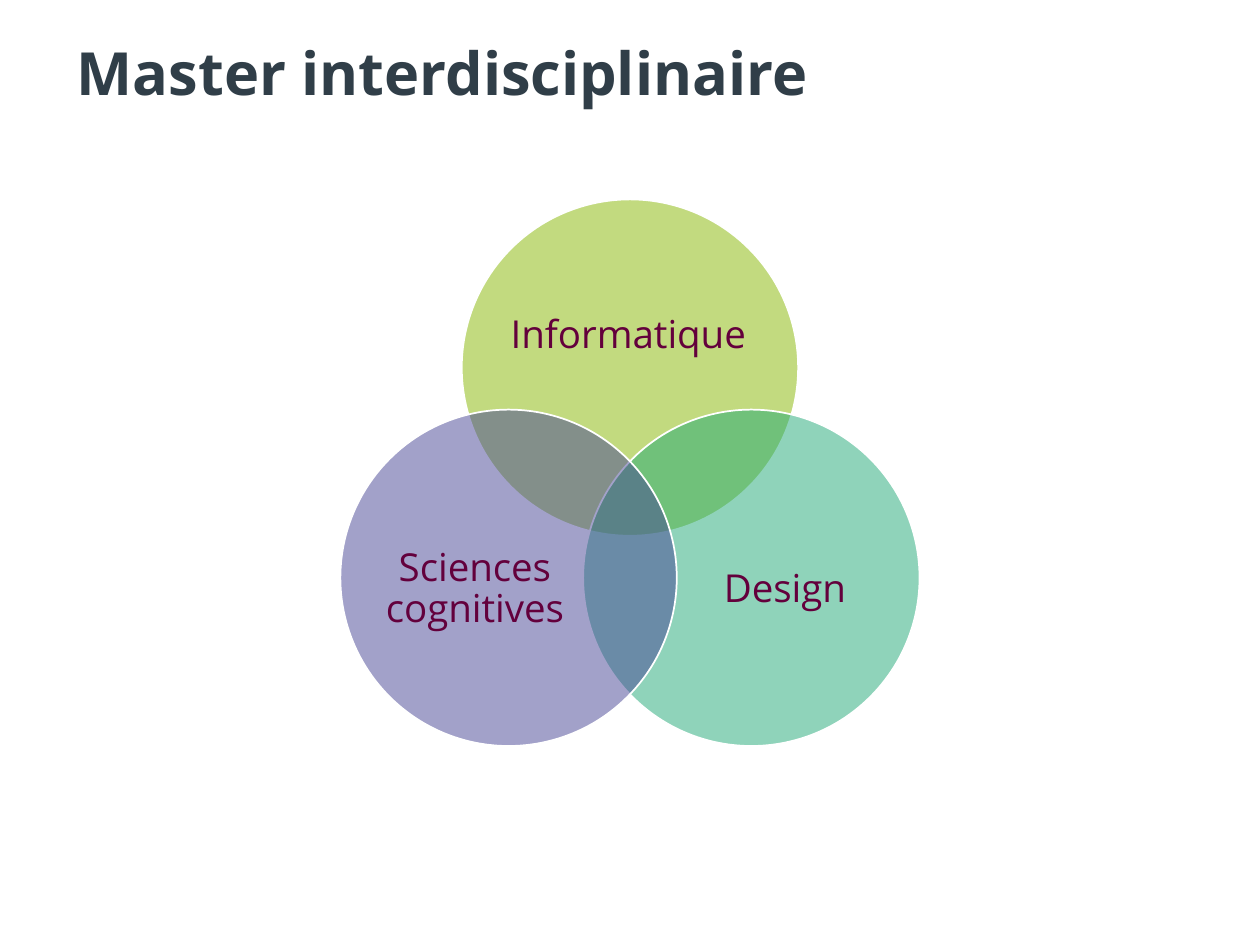
import math
import pptx
import pptx.util
import pptx.dml.color
import pptx.enum.shapes
import pptx.enum.text
import pptx.oxml.ns
import lxml.etree

TITLE = "Master interdisciplinaire"
FONT, INK, PLUM, WHITE = "Open Sans", "303E48", "63003C", "FFFFFF"

# label, fill, angle around the hub, label box as shares of the circle
DISCS = [
    ("Informatique", "86B700", -90, (0.13, 0.18, 0.73, 0.45)),
    ("Design", "20A977", 30, (0.3, 0.26, 0.6, 0.55)),
    ("Sciences cognitives", "464595", 150, (0.1, 0.26, 0.6, 0.55)),
]
WIDE, HIGH = 10, 7.5
HUB = (WIDE / 2, 4.03)
SIZE = 2.67
REACH = SIZE / 2.4

ALIGN = pptx.enum.text.PP_ALIGN
inch = pptx.util.Inches


def tint(code):
    return pptx.dml.color.RGBColor.from_string(code)


def write(shape, text, size, color, bold=False, align=ALIGN.LEFT, pad=(0, 0)):
    frame = shape.text_frame
    frame.word_wrap = True
    frame.auto_size = pptx.enum.text.MSO_AUTO_SIZE.NONE
    frame.vertical_anchor = pptx.enum.text.MSO_ANCHOR.MIDDLE
    frame.margin_left = frame.margin_right = inch(pad[0])
    frame.margin_top = frame.margin_bottom = inch(pad[1])
    para = frame.paragraphs[0]
    para.alignment, para.line_spacing = align, 0.9
    run = para.add_run()
    run.text = text
    run.font.name, run.font.size = FONT, pptx.util.Pt(size)
    run.font.bold, run.font.color.rgb = bold, tint(color)


def disc(group, left, top, color):
    shape = group.shapes.add_shape(
        pptx.enum.shapes.MSO_SHAPE.OVAL,
        inch(left), inch(top), inch(SIZE), inch(SIZE))
    shape.shadow.inherit = False
    shape.fill.solid()
    shape.fill.fore_color.rgb = tint(color)
    shape.line.color.rgb = tint(WHITE)
    shape.line.width = pptx.util.Pt(1)
    # Half-transparent fill
    qn = pptx.oxml.ns.qn
    fill = shape.fill._xPr.find(qn("a:solidFill"))
    lxml.etree.SubElement(fill[0], qn("a:alpha"), val="50000")


def main():
    deck = pptx.Presentation()
    deck.slide_width, deck.slide_height = inch(WIDE), inch(HIGH)
    slide = deck.slides.add_slide(deck.slide_layouts[5])

    # Title
    title = slide.shapes.title
    title.left, title.top = inch(0.51), inch(0.3)
    title.width, title.height = inch(8.35), inch(0.61)
    write(title, TITLE, 34, INK, bold=True, pad=(0.1, 0.05))

    # Venn diagram
    venn = slide.shapes.add_group_shape()
    for label, color, angle, box in DISCS:
        turn = math.radians(angle)
        left = HUB[0] + REACH * math.cos(turn) - SIZE / 2
        top = HUB[1] + REACH * math.sin(turn) - SIZE / 2
        disc(venn, left, top, color)
        x, y, w, h = (share * SIZE for share in box)
        text = venn.shapes.add_textbox(
            inch(left + x), inch(top + y), inch(w), inch(h))
        write(text, label, 22, PLUM, align=ALIGN.CENTER)

    deck.save("out.pptx")


if __name__ == "__main__":
    main()
